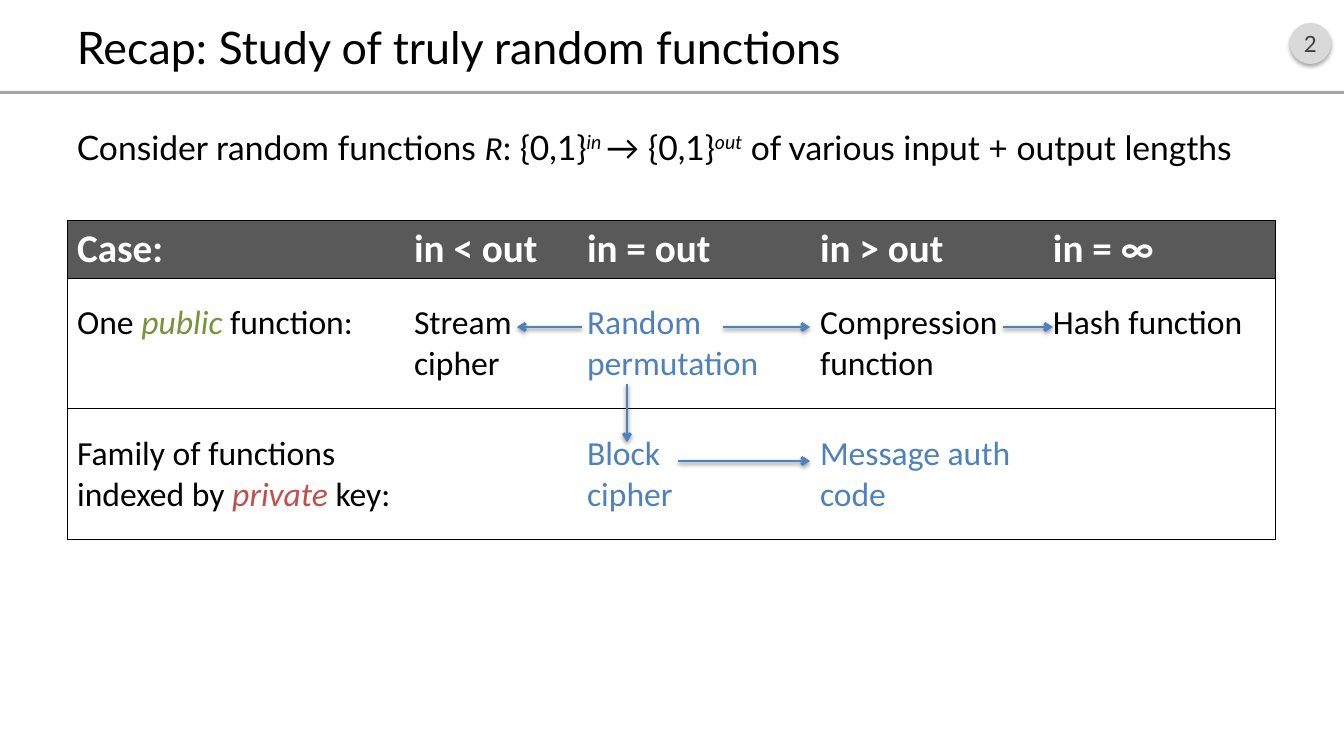
from lxml.etree import SubElement
from pptx import Presentation
from pptx.dml.color import RGBColor
from pptx.enum.shapes import MSO_CONNECTOR as CONNECTOR, MSO_SHAPE as SHAPE
from pptx.enum.text import MSO_ANCHOR as ANCHOR, PP_ALIGN as ALIGN
from pptx.oxml.ns import qn
from pptx.util import Emu, Pt

BLACK, WHITE, BLUE = "000000", "FFFFFF", "4F81BD"
GREEN, RED = "77933C", "C0504D"
HEADER_FILL, RULE_GRAY, BADGE_FILL, BADGE_TEXT = "595959", "A6A6A6", "D9D9D9", "404040"

COLUMNS = [337, 173, 233, 233, 233]
ROWS = [58, 131, 131]
CELL_TOP = 25
# Each cell is a list of (text, colour, italic) runs.
CASES = [
    [[(case, WHITE, False)] for case in
     ("Case:", "in < out", "in = out", "in > out", "in = ∞")],
    [[("One ", BLACK, False), ("public ", GREEN, True), ("function:", BLACK, False)],
     [("Stream\ncipher", BLACK, False)],
     [("Random permutation", BLUE, False)],
     [("Compression function", BLACK, False)],
     [("Hash function", BLACK, False)]],
    [[("Family of functions indexed by ", BLACK, False), ("private ", RED, True),
      ("key:", BLACK, False)],
     [],
     [("Block\ncipher", BLUE, False)],
     [("Message auth code", BLUE, False)],
     []],
]
# Start and end of each arrow, measured from the table's corner.
ARROWS = [
    ((515, 107), (450, 107)),
    ((656, 107), (743, 107)),
    ((936, 107), (986, 107)),
    ((560, 164), (560, 222)),
    ((611, 241), (743, 241)),
]


def px(length):
    return Emu(round(length * 914400 / 100.8))


def rgb(color):
    return RGBColor.from_string(color)


def style(paragraph, font, size, color=BLACK):
    paragraph.font.name = font
    paragraph.font.size = Pt(size)
    paragraph.font.color.rgb = rgb(color)


def add_run(paragraph, text, color=None, italic=False):
    """Add text as runs, with a line break at each newline."""
    for i, line in enumerate(text.split("\n")):
        if i:
            paragraph.add_line_break()
        run = paragraph.add_run()
        run.text = line
        if color:
            run.font.color.rgb = rgb(color)
        if italic:
            run.font.italic = True
    return run


def add_shadow(shape, distance, opacity):
    effects = SubElement(shape._element.spPr, qn("a:effectLst"))
    shadow = SubElement(effects, qn("a:outerShdw"), blurRad=str(Pt(3.1)),
                        dist=str(Pt(distance)), dir="5400000", rotWithShape="0")
    tint = SubElement(shadow, qn("a:srgbClr"), val=BLACK)
    SubElement(tint, qn("a:alpha"), val=str(opacity * 1000))


def add_plain_shape(slide, kind, box, fill):
    shape = slide.shapes.add_shape(kind, *map(px, box))
    shape.fill.solid()
    shape.fill.fore_color.rgb = rgb(fill)
    shape.line.fill.background()
    return shape


def add_text_box(slide, box):
    frame = slide.shapes.add_textbox(*map(px, box)).text_frame
    frame.word_wrap = True
    return frame


def add_header(slide, left, top, width, height):
    rule = add_plain_shape(slide, SHAPE.RECTANGLE,
                           (left, top + height - 3, width, 3), RULE_GRAY)
    rule.shadow.inherit = False

    badge = add_plain_shape(slide, SHAPE.OVAL,
                            (left + width - 54, top + 23, 41, 41), BADGE_FILL)
    add_shadow(badge, 1.8, 35)
    number = badge.text_frame
    number.margin_left = number.margin_right = 0
    number.vertical_anchor = ANCHOR.MIDDLE
    number.text = "2"
    number.paragraphs[0].alignment = ALIGN.CENTER
    style(number.paragraphs[0], "Lato", 16, BADGE_TEXT)

    title = add_text_box(slide, (left + 67, top + 16, width - 134, 61))
    title.vertical_anchor = ANCHOR.MIDDLE
    title.text = "Recap: Study of truly random functions"
    style(title.paragraphs[0], "Lato", 32)


def add_statement(slide, *box):
    statement = add_text_box(slide, box).paragraphs[0]
    style(statement, "Lato", 24)
    add_run(statement, "Consider random functions ")
    add_run(statement, "R", italic=True).font.name = "Calibri"
    add_run(statement, ": {0,1}")
    for exponent, rest in (("in ", "→ {0,1}"),
                           ("out", " of various input + output lengths")):
        raised = add_run(statement, exponent, italic=True)
        raised.font._element.set("baseline", "34000")
        add_run(statement, rest)


def set_borders(cell, visible):
    """Draw the sides named in visible (of L, R, T, B) and hide the others."""
    props = cell._tc.get_or_add_tcPr()
    for i, side in enumerate("LRTB"):
        border = SubElement(props, qn(f"a:ln{side}"), w=str(Pt(0.75)))
        if side in visible:
            SubElement(SubElement(border, qn("a:solidFill")), qn("a:srgbClr"), val=BLACK)
        else:
            SubElement(border, qn("a:noFill"))
        props.insert(i, border)


def add_cases(slide, left, top):
    frame = slide.shapes.add_table(len(ROWS), len(COLUMNS), px(left), px(top),
                                   px(sum(COLUMNS)), px(sum(ROWS)))
    table = frame.table
    table.first_row = table.horz_banding = False
    for column, width in zip(table.columns, COLUMNS):
        column.width = px(width)
    for r, (height, contents) in enumerate(zip(ROWS, CASES)):
        table.rows[r].height = px(height)
        for c, runs in enumerate(contents):
            cell = table.cell(r, c)
            paragraph = cell.text_frame.paragraphs[0]
            if r == 0:
                cell.fill.solid()
                cell.fill.fore_color.rgb = rgb(HEADER_FILL)
                style(paragraph, "Calibri", 28, WHITE)
                paragraph.font.bold = True
            else:
                cell.fill.background()
                cell.margin_top = px(CELL_TOP)
                style(paragraph, "Calibri", 24)
            for run in runs:
                add_run(paragraph, *run)
            sides = "TB"
            if c == 0:
                sides += "L"
            if c == len(COLUMNS) - 1:
                sides += "R"
            set_borders(cell, sides)


def add_arrows(slide, left, top):
    for (x1, y1), (x2, y2) in ARROWS:
        arrow = slide.shapes.add_connector(CONNECTOR.STRAIGHT, px(left + x1), px(top + y1),
                                           px(left + x2), px(top + y2))
        arrow.line.color.rgb = rgb(BLUE)
        arrow.line.width = Pt(2)
        SubElement(arrow.line._get_or_add_ln(), qn("a:tailEnd"), type="arrow")
        add_shadow(arrow, 1.6, 38)


def main():
    deck = Presentation()
    deck.slide_width, deck.slide_height = px(1344), px(756)
    slide = deck.slides.add_slide(deck.slide_layouts[6])
    add_header(slide, 0, 0, 1344, 94)
    add_statement(slide, 67, 122, 1210, 580)
    add_cases(slide, 67, 220)
    add_arrows(slide, 67, 220)
    deck.save("out.pptx")


if __name__ == "__main__":
    main()
